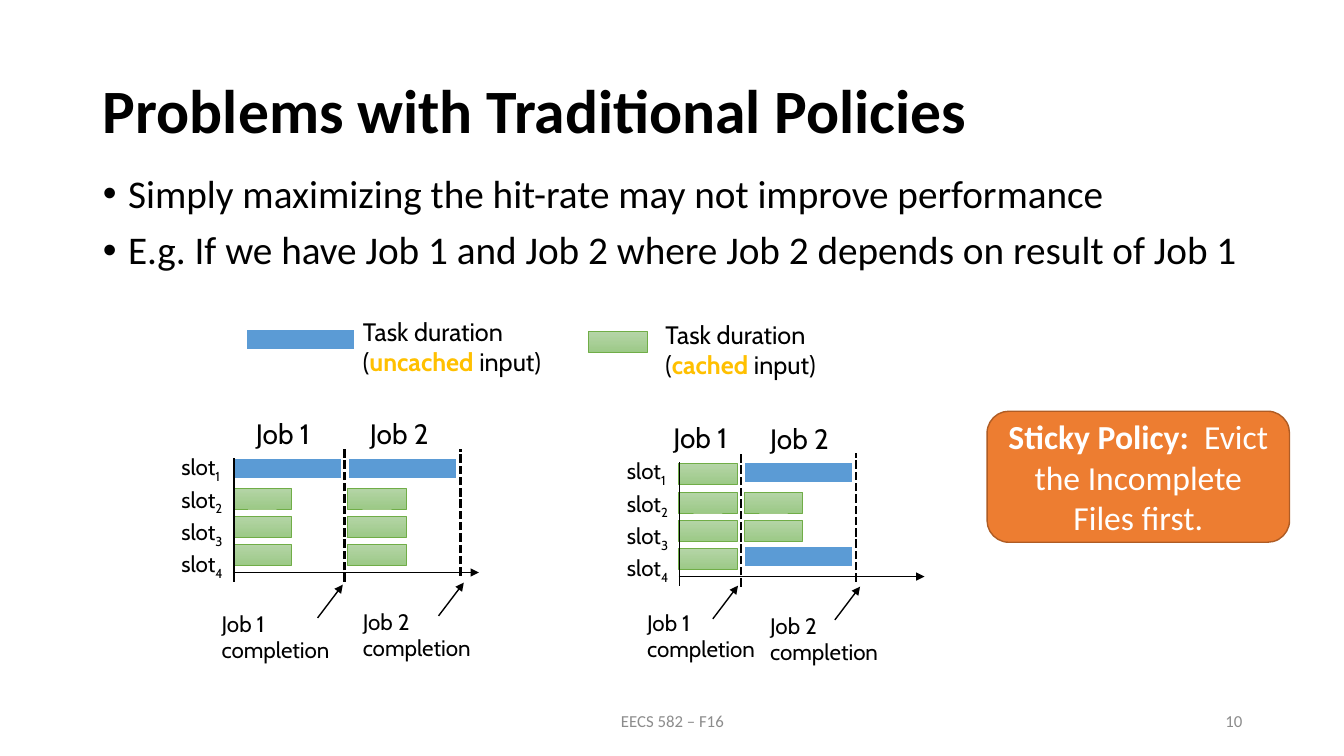
from dataclasses import dataclass
from typing import NamedTuple

from lxml import etree
from pptx import Presentation
from pptx import util as u
from pptx.dml.color import RGBColor
from pptx.enum import dml, shapes, text
from pptx.oxml.ns import qn

BLACK, WHITE, GRAY, GOLD = "000000", "FFFFFF", "8C8C8C", "FFC000"
BLUE, GREEN_LINE = "5B9BD5", "70AD47"
GREEN_STOPS = ("B5D5A7", "9CC987")
BAR_HEIGHT, UNCACHED_WIDTH, CACHED_WIDTH = 0.21, 1.08, 0.58
ROW_PITCH = 0.28
LEFT, CENTER, RIGHT = text.PP_ALIGN.LEFT, text.PP_ALIGN.CENTER, text.PP_ALIGN.RIGHT


class Point(NamedTuple):
    x: float
    y: float


class Box(NamedTuple):
    x: float
    y: float
    w: float
    h: float


class Run(NamedTuple):
    text: str
    color: str = BLACK
    bold: bool = False
    subscript: bool = False


@dataclass
class Job:
    name: str
    title: Point
    start: float
    end: float
    dash_bottom: float
    cached: tuple[bool, ...]
    caption: Point
    arrow_tip: Point


@dataclass
class Schedule:
    slots: Point
    origin: Point
    jobs: tuple[Job, ...]


@dataclass
class LegendItem:
    bar: Point
    cached: bool
    label: Box
    word: str


LEGEND = (
    LegendItem(Point(2.44, 3.26), False, Box(3.5, 3.09, 2.19, 0.71), "uncached "),
    LegendItem(Point(5.84, 3.29), True, Box(6.5, 3.12, 1.89, 0.71), "cached "),
)
ONE_MISS = (False, True, True, True)
SCHEDULES = (
    Schedule(Point(1.7, 4.45), Point(2.31, 5.68), (
        Job("Job 1", Point(2.44, 4.08), 2.31, 3.42, 5.77, ONE_MISS,
            Point(2.1, 6), Point(3.4, 5.8)),
        Job("Job 2", Point(3.57, 4.08), 3.45, 4.57, 5.71, ONE_MISS,
            Point(3.5, 5.98), Point(4.6, 5.78)),
    )),
    Schedule(Point(6.12, 4.49), Point(6.73, 5.72), (
        Job("Job 1", Point(6.58, 4.12), 6.73, 7.35, 5.82, (True,) * 4,
            Point(6.32, 5.99), Point(7.32, 5.81)),
        Job("Job 2", Point(7.54, 4.13), 7.38, 8.49, 5.77, (False, True, True, False),
            Point(7.54, 6.02), Point(8.53, 5.82)),
    )),
)


def rgb(color: str) -> RGBColor:
    return RGBColor.from_string(color)


def inches(box: Box) -> list[int]:
    return [u.Inches(v) for v in box]


def style_run(r, size: float, font: str, run: Run) -> None:
    r.font.size = u.Pt(size)
    r.font.name = font
    r.font.bold = run.bold
    r.font.color.rgb = rgb(run.color)
    if run.subscript:
        r.font._element.set("baseline", "-25000")


def fill_text(tf, lines: list[list[Run]], size: float, font: str, align=LEFT,
              gap: float = 0) -> None:
    tf.word_wrap = True
    for i, line in enumerate(lines):
        p = tf.paragraphs[0] if i == 0 else tf.add_paragraph()
        p.alignment = align
        p.space_after = u.Pt(gap)
        for run in line:
            r = p.add_run()
            r.text = run.text
            style_run(r, size, font, run)


def add_text(s, box: Box, lines: list[list[Run]], size: float, font: str = "Cabin",
             align=LEFT, gap: float = 0, anchor=text.MSO_ANCHOR.TOP) -> None:
    tf = s.shapes.add_textbox(*inches(box)).text_frame
    tf.vertical_anchor = anchor
    fill_text(tf, lines, size, font, align, gap)


def add_box(s, kind, box: Box, fill: str, line: str, width: float):
    sp = s.shapes.add_shape(kind, *inches(box))
    sp.shadow.inherit = False
    sp.fill.solid()
    sp.fill.fore_color.rgb = rgb(fill)
    sp.line.color.rgb = rgb(line)
    sp.line.width = u.Pt(width)
    return sp


def add_bar(s, at: Point, cached: bool) -> None:
    rect = shapes.MSO_SHAPE.RECTANGLE
    if not cached:
        add_box(s, rect, Box(*at, UNCACHED_WIDTH, BAR_HEIGHT), BLUE, WHITE, 1.5)
        return
    sp = add_box(s, rect, Box(*at, CACHED_WIDTH, BAR_HEIGHT), GREEN_STOPS[0], GREEN_LINE, 0.5)
    sp.fill.gradient()
    sp.fill.gradient_angle = 270
    for stop, color in zip(sp.fill.gradient_stops, GREEN_STOPS):
        stop.color.rgb = rgb(color)


def add_line(s, start: Point, end: Point, width: float = 1, dashed: bool = False,
             arrow: bool = False) -> None:
    c = s.shapes.add_connector(shapes.MSO_CONNECTOR.STRAIGHT, *[u.Inches(v) for v in start + end])
    c.line.color.rgb = rgb(BLACK)
    c.line.width = u.Pt(width)
    if dashed:
        c.line.dash_style = dml.MSO_LINE.SQUARE_DOT
    if arrow:
        etree.SubElement(c.line._get_or_add_ln(), qn("a:tailEnd"), type="triangle")
    etree.SubElement(c._element.spPr, qn("a:effectLst"))


def add_job(s, job: Job, axis_y: float) -> None:
    for row, cached in enumerate(job.cached):
        y = axis_y - 1.12 + row * ROW_PITCH - (0 if cached else 0.02)
        add_bar(s, Point(job.start, y), cached)
    add_line(s, Point(job.end, job.dash_bottom), Point(job.end, axis_y - 1.23), 2, dashed=True)
    add_text(s, Box(*job.title, 0.87, 0.44), [[Run(job.name)]], 20)
    add_text(s, Box(*job.caption, 1.33, 0.64), [[Run(job.name)], [Run("completion")]], 16)
    tip = job.arrow_tip
    add_line(s, Point(tip.x - 0.25, tip.y + 0.33), tip, arrow=True)


def add_schedule(s, schedule: Schedule) -> None:
    x, y = schedule.origin
    slots = [[Run("slot"), Run(str(n), subscript=True)] for n in range(1, 5)]
    add_text(s, Box(*schedule.slots, 0.65, 1.25), slots, 16, gap=1.25)
    add_line(s, Point(x, y), Point(x + 2.44, y), arrow=True)
    for job in schedule.jobs:
        add_job(s, job, y)
    add_line(s, Point(x + 0.01, y + 0.09), Point(x + 0.01, y - 1.14))


def place(sp, box: Box) -> None:
    sp.left, sp.top, sp.width, sp.height = inches(box)


def add_headings(s) -> None:
    title, body = s.shapes.title, s.placeholders[1]
    place(title, Box(0.92, 0.4, 11.5, 1.45))
    title.text_frame.vertical_anchor = text.MSO_ANCHOR.MIDDLE
    fill_text(title.text_frame, [[Run("Problems with Traditional Policies", bold=True)]],
              44, "Calibri")
    title.text_frame.paragraphs[0].line_spacing = 0.9

    place(body, Box(0.92, 1.68, 11.5, 5.13))
    fill_text(body.text_frame, [
        [Run("Simply maximizing the hit-rate may not improve performance")],
        [Run("E.g. If we have Job 1 and Job 2 where Job 2 depends on result of Job 1")],
    ], 28, "Calibri")
    for p in body.text_frame.paragraphs:
        p.line_spacing = 0.9
        p.space_before = u.Pt(10)
        pPr = p._p.get_or_add_pPr()
        pPr.set("marL", str(u.Inches(0.25)))
        pPr.set("indent", str(u.Inches(-0.25)))


def main() -> None:
    prs = Presentation()
    prs.slide_width, prs.slide_height = u.Inches(13.33), u.Inches(7.5)
    s = prs.slides.add_slide(prs.slide_layouts[1])
    add_headings(s)
    for item in LEGEND:
        add_bar(s, item.bar, item.cached)
        add_text(s, item.label, [[Run("Task duration")],
                                 [Run("("), Run(item.word, GOLD, True), Run("input)")]], 18)
    for schedule in SCHEDULES:
        add_schedule(s, schedule)
    sp = add_box(s, shapes.MSO_SHAPE.ROUNDED_RECTANGLE, Box(9.79, 4.08, 3, 1.3),
                 "ED7D31", "AF5C24", 1)
    sp.text_frame.vertical_anchor = text.MSO_ANCHOR.MIDDLE
    fill_text(sp.text_frame, [[Run("Sticky Policy:  ", WHITE, True),
                               Run("Evict the Incomplete Files first.", WHITE)]],
              24, "Calibri", CENTER)
    for box, label, align in ((Box(9.42, 6.95, 3, 0.4), "10", RIGHT),
                              (Box(4.42, 6.95, 4.5, 0.4), "EECS 582 – F16", CENTER)):
        add_text(s, box, [[Run(label, GRAY)]], 12, "Calibri", align,
                 anchor=text.MSO_ANCHOR.MIDDLE)
    prs.save("out.pptx")


if __name__ == "__main__":
    main()
